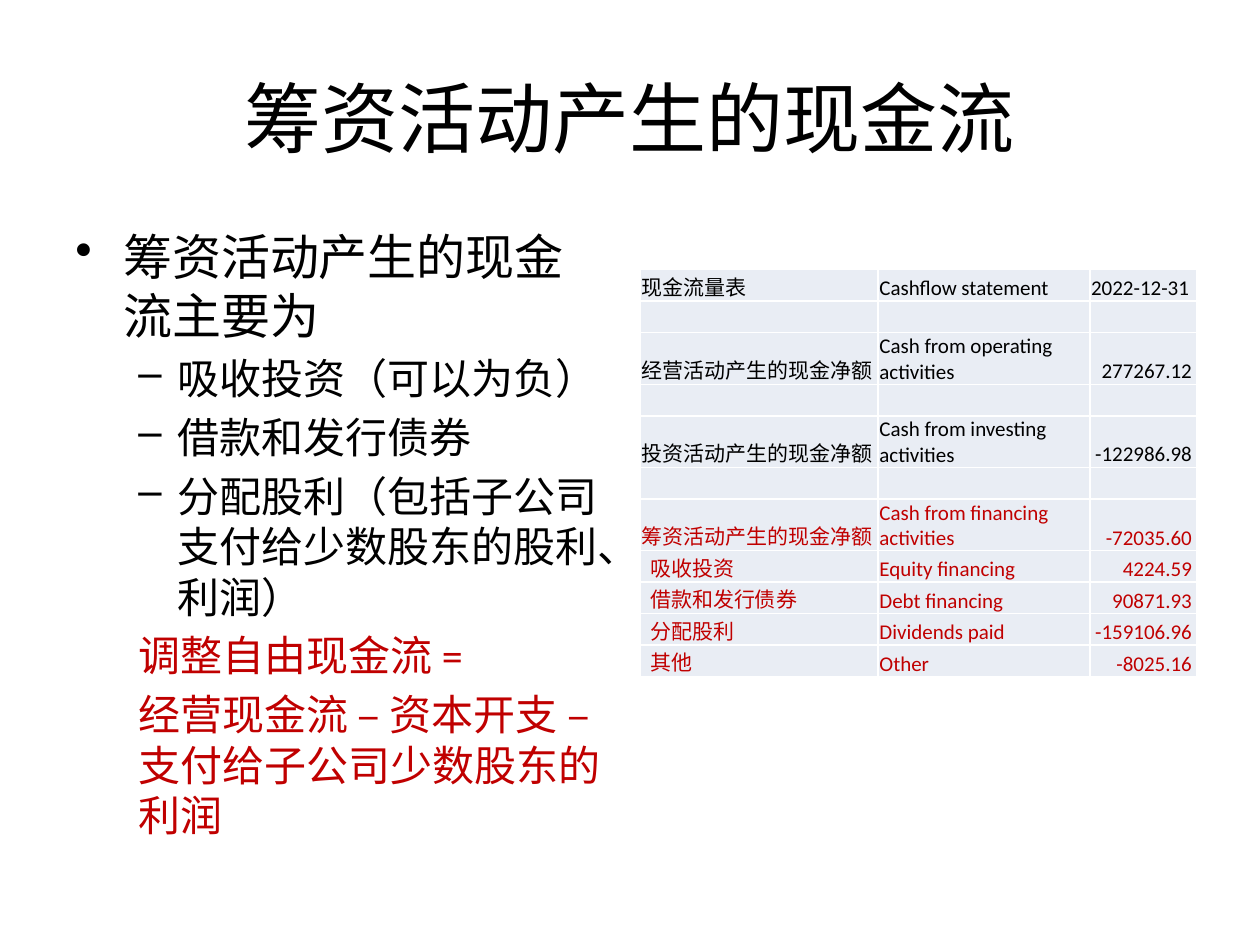
from lxml import etree
from pptx import Presentation
from pptx.dml.color import RGBColor
from pptx.enum.text import MSO_ANCHOR, PP_ALIGN
from pptx.oxml.ns import qn
from pptx.util import Inches, Pt

MIDDLE, BOTTOM = MSO_ANCHOR.MIDDLE, MSO_ANCHOR.BOTTOM
LEFT, CENTER, RIGHT = PP_ALIGN.LEFT, PP_ALIGN.CENTER, PP_ALIGN.RIGHT
BLACK = RGBColor(0x00, 0x00, 0x00)
RED = RGBColor(0xC0, 0x00, 0x00)
CELL_FILL = RGBColor(0xE9, 0xED, 0xF4)
BORDER = RGBColor(0xFF, 0xFF, 0xFF)
FONT = "Calibri"

TITLE = "筹资活动产生的现金流"
POINTS = [
    ("筹资活动产生的现金流主要为", "•", 28, 0.38, -0.38, BLACK),
    ("吸收投资（可以为负）", "–", 24, 0.81, -0.31, BLACK),
    ("借款和发行债券", "–", 24, 0.81, -0.31, BLACK),
    ("分配股利（包括子公司支付给少数股东的股利、利润）", "–", 24, 0.81, -0.31, BLACK),
    ("调整自由现金流 =", None, 24, 0.5, 0, RED),
    ("经营现金流 – 资本开支 – 支付给子公司少数股东的利润", None, 24, 0.5, 0, RED),
]
EMPTY = ("", "", "")
STATEMENT = [
    ("现金流量表", "Cashflow statement", "2022-12-31"),
    EMPTY,
    ("经营活动产生的现金净额", "Cash from operating activities", "277267.12"),
    EMPTY,
    ("投资活动产生的现金净额", "Cash from investing activities", "-122986.98"),
    EMPTY,
    ("筹资活动产生的现金净额", "Cash from financing activities", "-72035.60"),
    ("吸收投资", "Equity financing", "4224.59"),
    ("借款和发行债券", "Debt financing", "90871.93"),
    ("分配股利", "Dividends paid", "-159106.96"),
    ("其他", "Other", "-8025.16"),
]
FINANCING_ROW = 6
COLUMN_WIDTHS = (1.89, 1.68, 0.85)


def set_font(paragraph, size, color):
    paragraph.font.name = FONT
    paragraph.font.size = Pt(size)
    paragraph.font.color.rgb = color


def place_title(slide, left, top, width, height):
    title = slide.shapes.title
    title.left, title.top = Inches(left), Inches(top)
    title.width, title.height = Inches(width), Inches(height)
    title.text_frame.text = TITLE
    title.text_frame.vertical_anchor = MIDDLE
    heading = title.text_frame.paragraphs[0]
    heading.alignment = CENTER
    set_font(heading, 44, BLACK)


def place_points(slide, left, top, width, height):
    box = slide.shapes.add_textbox(Inches(left), Inches(top), Inches(width), Inches(height))
    frame = box.text_frame
    frame.word_wrap = True
    for i, (text, bullet, size, margin, indent, color) in enumerate(POINTS):
        point = frame.add_paragraph() if i else frame.paragraphs[0]
        point.text = text
        properties = point._p.get_or_add_pPr()
        properties.set("marL", str(Inches(margin)))
        properties.set("indent", str(Inches(indent)))
        if bullet:
            etree.SubElement(properties, qn("a:buChar"), char=bullet)
        else:
            etree.SubElement(properties, qn("a:buNone"))
        if i:
            point.space_before = Pt(size * 0.2)
        set_font(point, size, color)


def draw_borders(cell):
    properties = cell._tc.get_or_add_tcPr()
    for side in ("lnL", "lnR", "lnT", "lnB"):
        line = etree.SubElement(properties, qn(f"a:{side}"), w=str(Pt(1)))
        fill = etree.SubElement(line, qn("a:solidFill"))
        etree.SubElement(fill, qn("a:srgbClr"), val=str(BORDER))


def fill_cell(cell, text, color, alignment, left_margin, right_margin):
    draw_borders(cell)
    cell.fill.solid()
    cell.fill.fore_color.rgb = CELL_FILL
    cell.margin_left, cell.margin_right = Inches(left_margin), Inches(right_margin)
    cell.margin_top, cell.margin_bottom = Inches(0.01), 0
    cell.vertical_anchor = BOTTOM
    cell.text = text
    entry = cell.text_frame.paragraphs[0]
    entry.alignment = alignment
    set_font(entry, 12, color)


def place_statement(slide, left, top, width, height):
    table = slide.shapes.add_table(
        len(STATEMENT), len(COLUMN_WIDTHS),
        Inches(left), Inches(top), Inches(width), Inches(height)).table
    table.first_row = table.horz_banding = False
    for column, column_width in zip(table.columns, COLUMN_WIDTHS):
        column.width = Inches(column_width)
    for r, entries in enumerate(STATEMENT):
        two_lines = entries[1].startswith("Cash from")
        table.rows[r].height = Inches(0.41 if two_lines else 0.25)
        color = RED if r >= FINANCING_ROW else BLACK
        for c, text in enumerate(entries):
            is_amount = c == 2 and r > 0
            is_item = c == 0 and r > FINANCING_ROW
            fill_cell(table.cell(r, c), text, color,
                      RIGHT if is_amount else LEFT,
                      0.08 if is_item else 0.01,
                      0.04 if is_amount else 0.01)


def main():
    deck = Presentation()
    deck.slide_width, deck.slide_height = Inches(10), Inches(7.5)
    slide = deck.slides.add_slide(deck.slide_layouts[5])
    place_title(slide, 0.5, 0.3, 9, 1.25)
    place_points(slide, 0.5, 1.75, 4.42, 4.95)
    place_statement(slide, 5.08, 2.14, 4.42, 3.23)
    deck.save("out.pptx")


if __name__ == "__main__":
    main()
